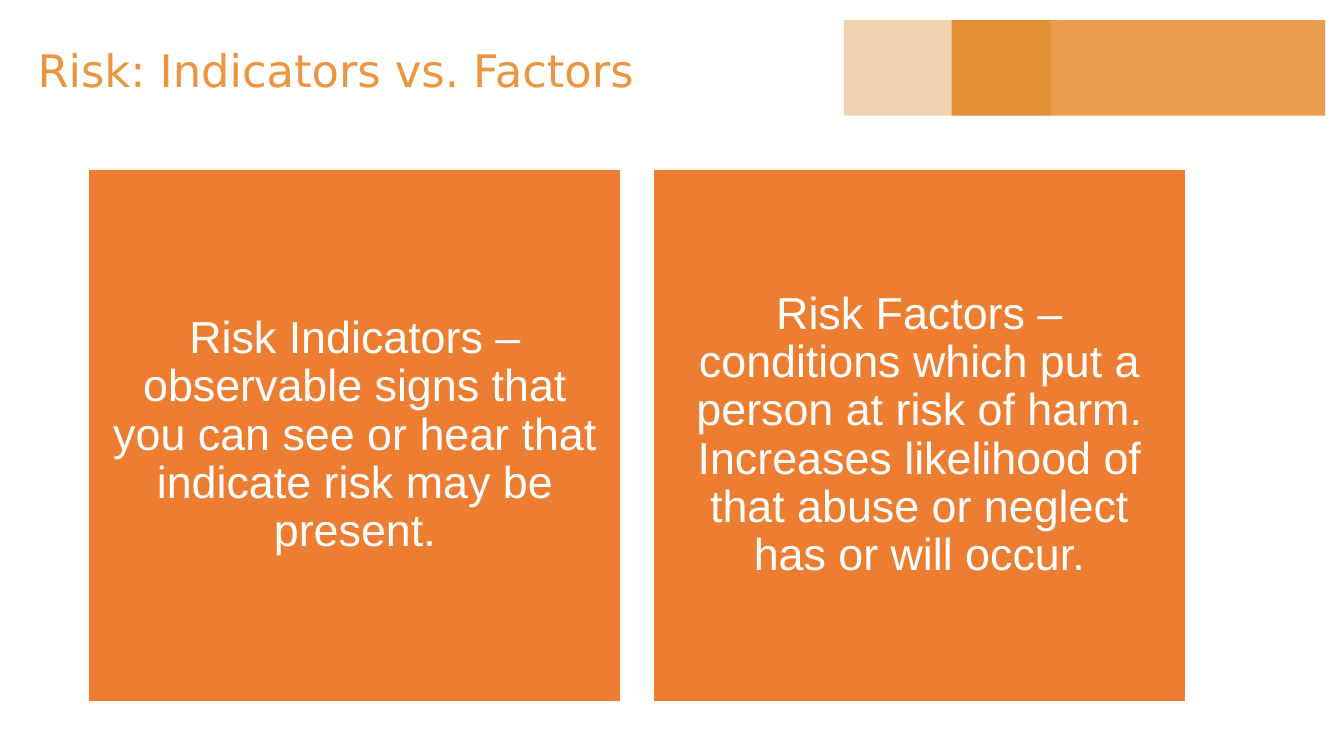
from lxml import etree
from pptx import Presentation
from pptx.dml.color import RGBColor
from pptx.enum.shapes import MSO_SHAPE
from pptx.enum.text import MSO_ANCHOR, PP_ALIGN
from pptx.oxml.ns import qn
from pptx.util import Inches, Pt

RECT = MSO_SHAPE.RECTANGLE
MIDDLE = MSO_ANCHOR.MIDDLE
LEFT, CENTER = PP_ALIGN.LEFT, PP_ALIGN.CENTER

COLORS = {
    "title": "EB9540",
    "bar": "EB9540",
    "tint": "D07700",
    "card": "ED7D31",
    "white": "FFFFFF",
}
CARDS = [
    "Risk Indicators – observable signs that you can see or hear that "
    "indicate risk may be present.",
    "Risk Factors – conditions which put a person at risk of harm. "
    "Increases likelihood of that abuse or neglect has or will occur.",
]


def color(name):
    """Return the named colour."""
    return RGBColor.from_string(COLORS[name])


def write(shape, text, font="Arial", size=24, ink="white", align=CENTER,
          inset=0.19, spacing=0.9):
    """Put formatted text in a shape."""
    frame = shape.text_frame
    frame.word_wrap = True
    frame.vertical_anchor = MIDDLE
    frame.margin_left = frame.margin_right = Inches(inset)
    frame.margin_top = frame.margin_bottom = Inches(inset)
    frame.text = text
    para = frame.paragraphs[0]
    para.alignment = align
    para.line_spacing = spacing
    para.font.name = font
    para.font.size = Pt(size)
    para.font.color.rgb = color(ink)


def block(slide, left, top, width, height, fill):
    """Add a plain filled rectangle without outline."""
    shape = slide.shapes.add_shape(
        RECT, Inches(left), Inches(top), Inches(width), Inches(height))
    shape.shadow.inherit = False
    shape.fill.solid()
    shape.fill.fore_color.rgb = color(fill)
    shape.line.fill.background()
    return shape


def banner(slide, left, top, width, height):
    """Draw two translucent bars that overlap."""
    bars = [(0.8, width - 0.8, "bar", 93), (0, 1.54, "tint", 31)]
    for shift, span, fill, alpha in bars:
        bar = block(slide, left + shift, top, span, height, fill)
        tone = next(bar.element.spPr.iter(qn("a:srgbClr")))
        etree.SubElement(tone, qn("a:alpha"), val=str(alpha * 1000))


def heading(slide, left, top, width, height):
    """Place and format the title."""
    title = slide.shapes.title
    title.left, title.top = Inches(left), Inches(top)
    title.width, title.height = Inches(width), Inches(height)
    write(title, "Risk: Indicators vs. Factors", font="DejaVu Sans",
          ink="title", align=LEFT, inset=0.1, spacing=1)


def cards(slide, left, top, width, height):
    """Set square cards at both ends of the box."""
    step = (width - height) / (len(CARDS) - 1)
    for index, text in enumerate(CARDS):
        card = block(slide, left + index * step, top, height, height, "card")
        card.line.color.rgb = color("white")
        card.line.width = Pt(2)
        write(card, text)


def main():
    """Build and save the slide."""
    deck = Presentation()
    deck.slide_width, deck.slide_height = Inches(10), Inches(10 * 9 / 16)
    slide = deck.slides.add_slide(deck.slide_layouts[5])
    banner(slide, 6.28, 0.15, 3.58, 0.71)
    heading(slide, 0.18, 0.05, 9, 0.94)
    cards(slide, 0.65, 1.25, 8.18, 3.98)
    deck.save("out.pptx")


if __name__ == "__main__":
    main()
